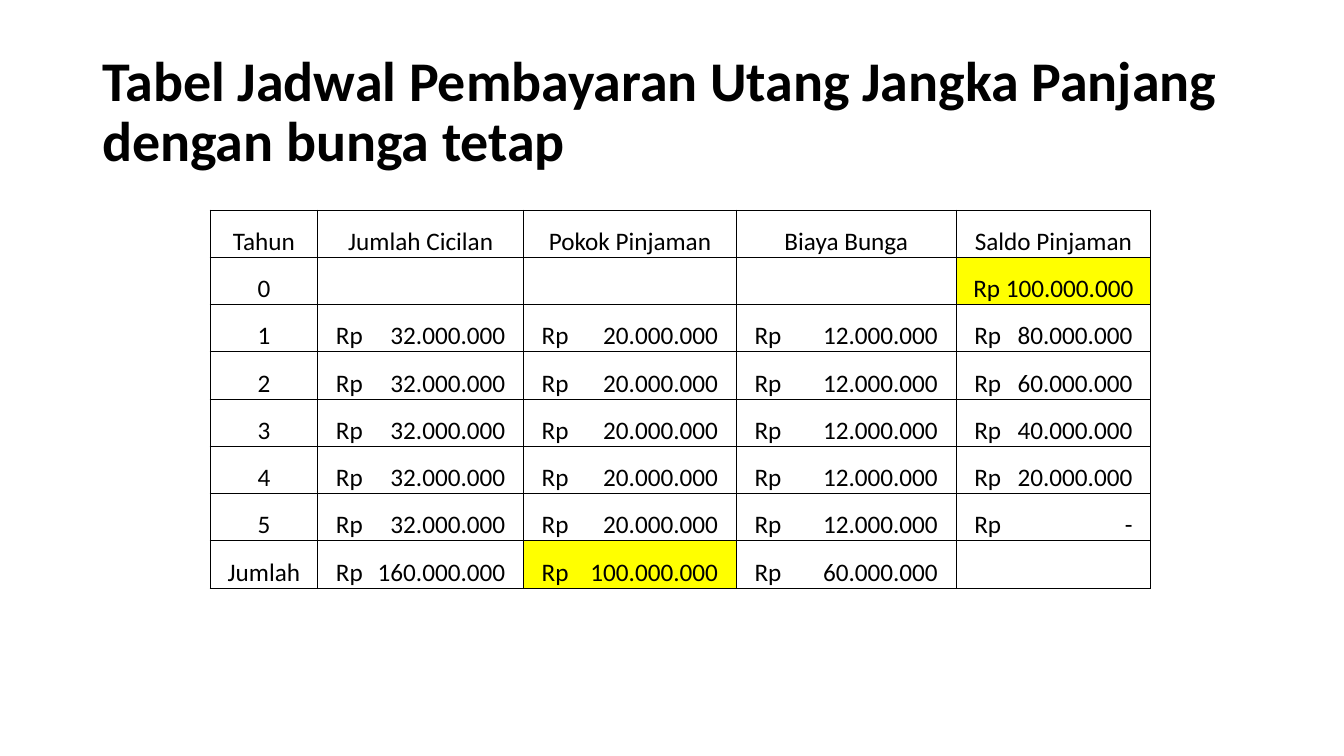
from lxml import etree
from pptx import Presentation
from pptx.dml.color import RGBColor
from pptx.enum import text
from pptx.oxml import ns
from pptx.util import Pt

TITLE = "Tabel Jadwal Pembayaran Utang Jangka Panjang dengan bunga tetap"
HEADERS = ["Tahun", "Jumlah Cicilan", "Pokok Pinjaman", "Biaya Bunga", "Saldo Pinjaman"]
YEARLY = ["Rp\t32.000.000", "Rp\t20.000.000", "Rp\t12.000.000"]
BALANCES = ["Rp\t80.000.000", "Rp\t60.000.000", "Rp\t40.000.000", "Rp\t20.000.000", "Rp\t-"]
ROWS = [
    HEADERS,
    ["0", "", "", "", "Rp 100.000.000"],
    *[[str(year), *YEARLY, balance] for year, balance in enumerate(BALANCES, 1)],
    ["Jumlah", "Rp\t160.000.000", "Rp\t100.000.000", "Rp\t60.000.000", ""],
]
HIGHLIGHTED = {(1, 4), (7, 2)}
COLORS = {"text": "000000", "border": "000000", "plain": "FFFFFF", "highlight": "FFFF00"}
FONT = "Calibri"
COL_WIDTHS = [77, 147, 152, 157, 139]
ROW_HEIGHT = 33.75
AMOUNT_INSET = 13


def format_runs(p, size, bold=False):
    for r in p.runs:
        r.font.name = FONT
        r.font.size = Pt(size)
        r.font.bold = bold
        r.font.color.rgb = RGBColor.from_string(COLORS["text"])


def add_borders(cell):
    tcPr = cell._tc.get_or_add_tcPr()
    for side in ("L", "R", "T", "B"):
        ln = etree.SubElement(tcPr, ns.qn(f"a:ln{side}"), w=str(Pt(0.5)))
        fill = etree.SubElement(ln, ns.qn("a:solidFill"))
        etree.SubElement(fill, ns.qn("a:srgbClr"), val=COLORS["border"])


def add_right_tab(p, position):
    tabs = etree.SubElement(p._p.get_or_add_pPr(), ns.qn("a:tabLst"))
    etree.SubElement(tabs, ns.qn("a:tab"), pos=str(Pt(position)), algn="r")


def fill_cell(cell, value, width, color):
    is_amount = "\t" in value
    cell.margin_left = Pt(AMOUNT_INSET if is_amount else 0.75)
    cell.margin_right = cell.margin_top = Pt(0.75)
    cell.margin_bottom = 0
    cell.vertical_anchor = text.MSO_ANCHOR.BOTTOM
    add_borders(cell)
    cell.fill.solid()
    cell.fill.fore_color.rgb = RGBColor.from_string(COLORS[color])
    p = cell.text_frame.paragraphs[0]
    p.text = value
    p.alignment = text.PP_ALIGN.LEFT if is_amount else text.PP_ALIGN.CENTER
    if is_amount:
        add_right_tab(p, width - 2 * AMOUNT_INSET)
    format_runs(p, 18)


def add_title(s):
    tf = s.shapes.add_textbox(Pt(66), Pt(28.75), Pt(828), Pt(104.4)).text_frame
    tf.word_wrap = True
    tf.vertical_anchor = text.MSO_ANCHOR.MIDDLE
    tf.text = TITLE
    p = tf.paragraphs[0]
    p.line_spacing = 0.9
    format_runs(p, 40, bold=True)


def add_schedule(s):
    table = s.shapes.add_table(
        len(ROWS), len(HEADERS), Pt(150), Pt(150),
        Pt(sum(COL_WIDTHS)), Pt(ROW_HEIGHT * len(ROWS)),
    ).table
    table.first_row = table.horz_banding = False
    for col, width in zip(table.columns, COL_WIDTHS):
        col.width = Pt(width)
    for i, values in enumerate(ROWS):
        table.rows[i].height = Pt(ROW_HEIGHT)
        for j, value in enumerate(values):
            color = "highlight" if (i, j) in HIGHLIGHTED else "plain"
            fill_cell(table.cell(i, j), value, COL_WIDTHS[j], color)


def main():
    prs = Presentation()
    prs.slide_width, prs.slide_height = Pt(960), Pt(540)
    s = prs.slides.add_slide(prs.slide_layouts[6])
    add_title(s)
    add_schedule(s)
    prs.save("out.pptx")


if __name__ == "__main__":
    main()
